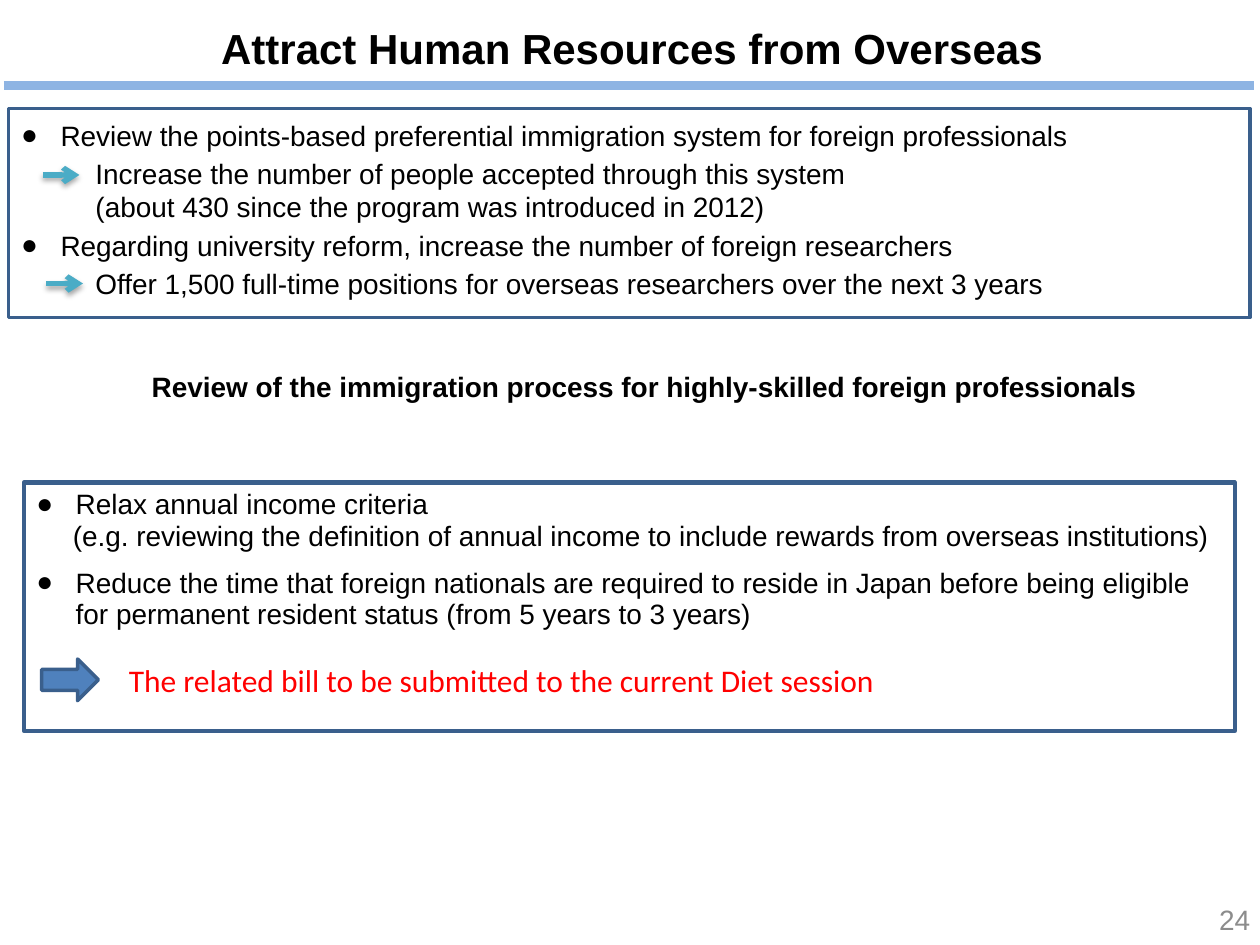
from dataclasses import dataclass
from lxml.etree import SubElement
from pptx import Presentation
from pptx.dml.color import RGBColor
from pptx.enum.shapes import MSO_CONNECTOR as Connector, MSO_SHAPE as Shape
from pptx.enum.text import MSO_ANCHOR as Anchor, PP_ALIGN as Align
from pptx.oxml.ns import qn
from pptx.util import Pt


@dataclass(frozen=True)
class Theme:
    font: str = "Arial"
    note_font: str = "Calibri"
    black: str = "000000"
    red: str = "FF0000"
    grey: str = "8C8C8C"
    frame: str = "3A5F8C"
    arrow: str = "4F81BD"
    teal: str = "4BACC6"
    rule: str = "8EB4E3"
    title: int = 24
    note: int = 18
    body: int = 16


theme = Theme()


def write(frame, text, first=False, size=theme.body, color=theme.black, font=theme.font,
          bold=False, align=Align.LEFT, leading=None, before=0, after=0, indent=0, bullet=False):
    para = frame.paragraphs[0] if first else frame.add_paragraph()
    para.alignment = align
    para.space_before, para.space_after = Pt(before), Pt(after)
    if leading:
        para.line_spacing = Pt(leading)
    props = para._p.get_or_add_pPr()
    props.set("marL", str(Pt(indent)))
    props.set("indent", str(Pt(-indent if bullet else 0)))
    if bullet:
        SubElement(props, qn("a:buFont"), typeface=theme.font)
        SubElement(props, qn("a:buChar"), char="●")
    span = para.add_run()
    span.text = text
    span.font.name, span.font.size, span.font.bold = font, Pt(size), bold
    span.font.color.rgb = RGBColor.from_string(color)


def draw_line(page, left, right, top, color, width):
    line = page.shapes.add_connector(Connector.STRAIGHT, Pt(left), Pt(top), Pt(right), Pt(top))
    line.line.color.rgb = RGBColor.from_string(color)
    line.line.width = Pt(width)
    return line, SubElement(line._element.spPr, qn("a:effectLst"))


deck = Presentation()
deck.slide_width, deck.slide_height = Pt(720), Pt(540)
page = deck.slides.add_slide(deck.slide_layouts[6])

labels = [
    ("Review of the immigration process for highly-skilled foreign professionals",
     (22.3, 207.4, 692, 26), Anchor.TOP, dict(bold=True, align=Align.CENTER)),
    ("24", (553.7, 511.2, 167.8, 28.8), Anchor.MIDDLE, dict(color=theme.grey, align=Align.RIGHT)),
    ("Attract Human Resources from Overseas", (0, 9.4, 722.2, 33.8), Anchor.TOP,
     dict(size=theme.title, bold=True, align=Align.CENTER)),
]
for text, bounds, anchor, style in labels:
    box = page.shapes.add_textbox(*map(Pt, bounds))
    box.text_frame.word_wrap = True
    box.text_frame.vertical_anchor = anchor
    write(box.text_frame, text, first=True, **style)

blocks = []
for bounds, width in [((5, 62, 709.2, 119.5), 2), ((13.7, 275.8, 691.9, 141.8), 2.5)]:
    block = page.shapes.add_shape(Shape.RECTANGLE, *map(Pt, bounds))
    block.shadow.inherit = False
    block.fill.background()
    block.line.color.rgb = RGBColor.from_string(theme.frame)
    block.line.width = Pt(width)
    block.text_frame.word_wrap = True
    block.text_frame.vertical_anchor = Anchor.TOP
    blocks.append(block.text_frame)

plans = page.shapes.add_textbox(Pt(5), Pt(71.3), Pt(726.5), Pt(100)).text_frame
plans.word_wrap = True
plans.vertical_anchor = Anchor.MIDDLE
point = dict(indent=22.5, bullet=True)
detail = dict(indent=42.5)
plan_lines = [
    ("Review the points-based preferential immigration system for foreign professionals", 6, point),
    ("Increase the number of people accepted through this system", 6, detail),
    ("(about 430 since the program was introduced in 2012)", 3, detail),
    ("Regarding university reform, increase the number of foreign researchers", 6, point),
    ("Offer 1,500 full-time positions for overseas researchers over the next 3 years", 6, detail),
]
for index, (text, before, style) in enumerate(plan_lines):
    write(plans, text, first=index == 0, leading=16, before=before, **style)

review_lines = [
    ("Relax annual income criteria", point),
    ("(e.g. reviewing the definition of annual income to include rewards from overseas institutions)",
     dict(indent=20.8, after=9)),
    ("Reduce the time that foreign nationals are required to reside in Japan before being eligible "
     "for permanent resident status (from 5 years to 3 years)", dict(point, after=9)),
    ("The related bill to be submitted to the current Diet session",
     dict(indent=52.8, before=12, size=theme.note, font=theme.note_font, color=theme.red)),
]
for index, (text, style) in enumerate(review_lines):
    write(blocks[1], text, first=index == 0, leading=18, **style)

for left, top in [(24.5, 100), (26.5, 162)]:
    pointer, effects = draw_line(page, left, left + 20.9, top, theme.teal, 3)
    SubElement(pointer.line._get_or_add_ln(), qn("a:tailEnd"), type="arrow")
    shadow = SubElement(effects, qn("a:outerShdw"), blurRad=str(Pt(3.1)), dist=str(Pt(1.8)),
                        dir="5400000", rotWithShape="0")
    shade = SubElement(shadow, qn("a:srgbClr"), val=theme.black)
    SubElement(shade, qn("a:alpha"), val="35000")

bill_arrow = page.shapes.add_shape(Shape.RIGHT_ARROW, Pt(23.8), Pt(376.6), Pt(32.4), Pt(23.8))
bill_arrow.shadow.inherit = False
bill_arrow.fill.solid()
bill_arrow.fill.fore_color.rgb = RGBColor.from_string(theme.arrow)
bill_arrow.line.color.rgb = RGBColor.from_string(theme.frame)
bill_arrow.line.width = Pt(2)

draw_line(page, 2.2, 716.4, 49, theme.rule, 5)

deck.save("out.pptx")
